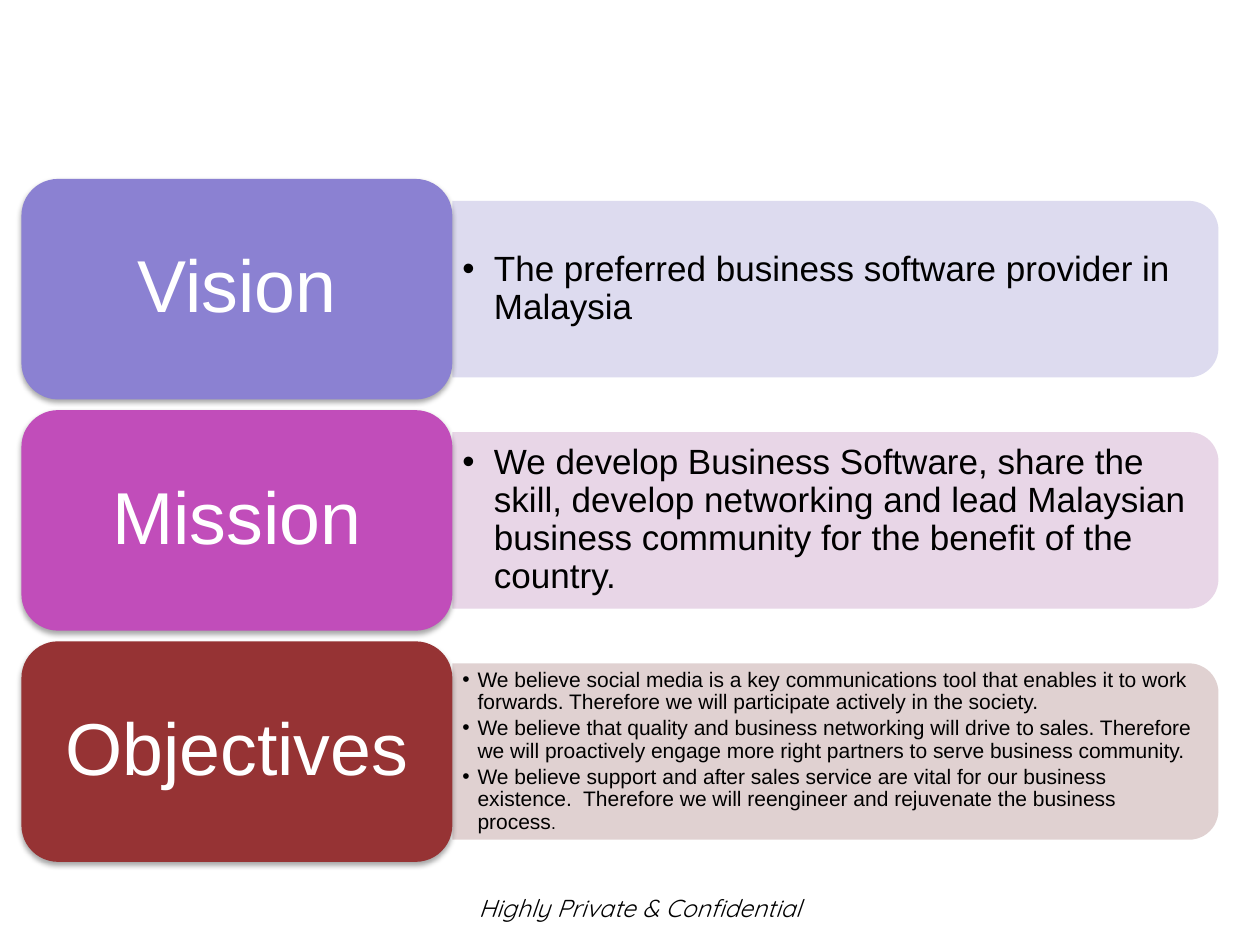
import pptx
import pptx.util
import pptx.dml.color
import pptx.enum.shapes
import pptx.enum.text
import pptx.oxml.ns
import lxml.etree

Inches = pptx.util.Inches
Pt = pptx.util.Pt
qn = pptx.oxml.ns.qn
RGB = pptx.dml.color.RGBColor.from_string
kinds = pptx.enum.shapes.MSO_SHAPE
middle = pptx.enum.text.MSO_ANCHOR.MIDDLE
center = pptx.enum.text.PP_ALIGN.CENTER

theme = {
    "font": "Arial", "foot_font": "Quicksand",
    "ink": "000000", "light": "FFFFFF",
    "label": 42, "large": 20, "small": 12, "dot": 10, "foot": 14,
}

rows = [
    ("Vision", "8B81D2", "DAD8EE", theme["large"], 0.25,
     ["The preferred business software provider in Malaysia"]),
    ("Mission", "C14DBA", "E6D2E5", theme["large"], 0.25,
     ["We develop Business Software, share the skill, develop networking and lead "
      "Malaysian business community for the benefit of the country."]),
    ("Objectives", "963334", "DDCDCD", theme["small"], 0.12,
     ["We believe social media is a key communications tool that enables it to work "
      "forwards. Therefore we will participate actively in the society.",
      "We believe that quality and business networking will drive to sales. Therefore "
      "we will proactively engage more right partners to serve business community.",
      "We believe support and after sales service are vital for our business "
      "existence.  Therefore we will reengineer and rejuvenate the business process"]),
]


def style(font, size, color, name=theme["font"]):
    font.size = Pt(size)
    font.name = name
    font.color.rgb = RGB(color)


def frame(shape, side, edge):
    box = shape.text_frame
    box.word_wrap = True
    box.vertical_anchor = middle
    box.margin_left = box.margin_right = Inches(side)
    box.margin_top = box.margin_bottom = Inches(edge)
    return box


deck = pptx.Presentation()
deck.slide_width = Inches(10)
deck.slide_height = Inches(7.5)
slide = deck.slides.add_slide(deck.slide_layouts[6])
shapes = slide.shapes

foot = frame(shapes.add_textbox(Inches(3.7), Inches(7.09), Inches(3.37), Inches(0.23)), 0.1, 0.1)
para = foot.paragraphs[0]
para.text = "Highly Private & Confidential"
style(para.font, theme["foot"], theme["ink"], theme["foot_font"])
para.font.italic = True

left, top, wide, high, step = 0.17, 1.42, 3.42, 1.75, 1.835
long, thick = 6.08, 1.4
edge = left + wide

for num, (name, dark, pale, size, dent, lines) in enumerate(rows):
    y = top + num * step
    mid = y + high / 2

    panel = shapes.add_shape(
        kinds.ROUND_2_SAME_RECTANGLE,
        Inches(edge + (long - thick) / 2), Inches(mid - long / 2), Inches(thick), Inches(long))
    panel.rotation = 90
    panel.shadow.inherit = False
    panel.fill.solid()
    panel.fill.fore_color.rgb = RGB(pale)
    panel.line.fill.background()
    tint = panel.element.spPr.find(".//" + qn("a:srgbClr"))
    lxml.etree.SubElement(tint, qn("a:alpha"), val="90000")

    body = frame(shapes.add_textbox(Inches(edge), Inches(mid - 0.63), Inches(6.01), Inches(1.26)),
                 0.08, 0.04)
    for spot, line in enumerate(lines):
        para = body.add_paragraph() if spot else body.paragraphs[0]
        para.text = line
        para.level = 1
        para.line_spacing = 0.9
        para.space_after = Pt(size * 0.15)
        props = para._p.get_or_add_pPr()
        props.set("marL", str(Inches(dent)))
        props.set("indent", str(-Inches(dent)))
        lxml.etree.SubElement(props, qn("a:buFont"), typeface=theme["font"])
        lxml.etree.SubElement(props, qn("a:buChar"), char="•")
        style(para.font, size, theme["ink"])

    card = shapes.add_shape(kinds.ROUNDED_RECTANGLE, Inches(left), Inches(y), Inches(wide), Inches(high))
    card.shadow.inherit = False
    card.fill.solid()
    card.fill.fore_color.rgb = RGB(dark)
    card.line.fill.background()
    glow = lxml.etree.SubElement(
        card.element.spPr.find(qn("a:effectLst")), qn("a:outerShdw"),
        blurRad=str(Pt(3.1)), dist=str(Pt(1.8)), dir="5400000", rotWithShape="0")
    shade = lxml.etree.SubElement(glow, qn("a:srgbClr"), val=theme["ink"])
    lxml.etree.SubElement(shade, qn("a:alpha"), val="35000")
    para = frame(card, 0.17, 0.09).paragraphs[0]
    para.text = name
    para.alignment = center
    para.line_spacing = 0.9
    style(para.font, theme["label"], theme["light"])

dot = body.paragraphs[-1].add_run()
dot.text = "."
dot.font.size = Pt(theme["dot"])

deck.save("out.pptx")
